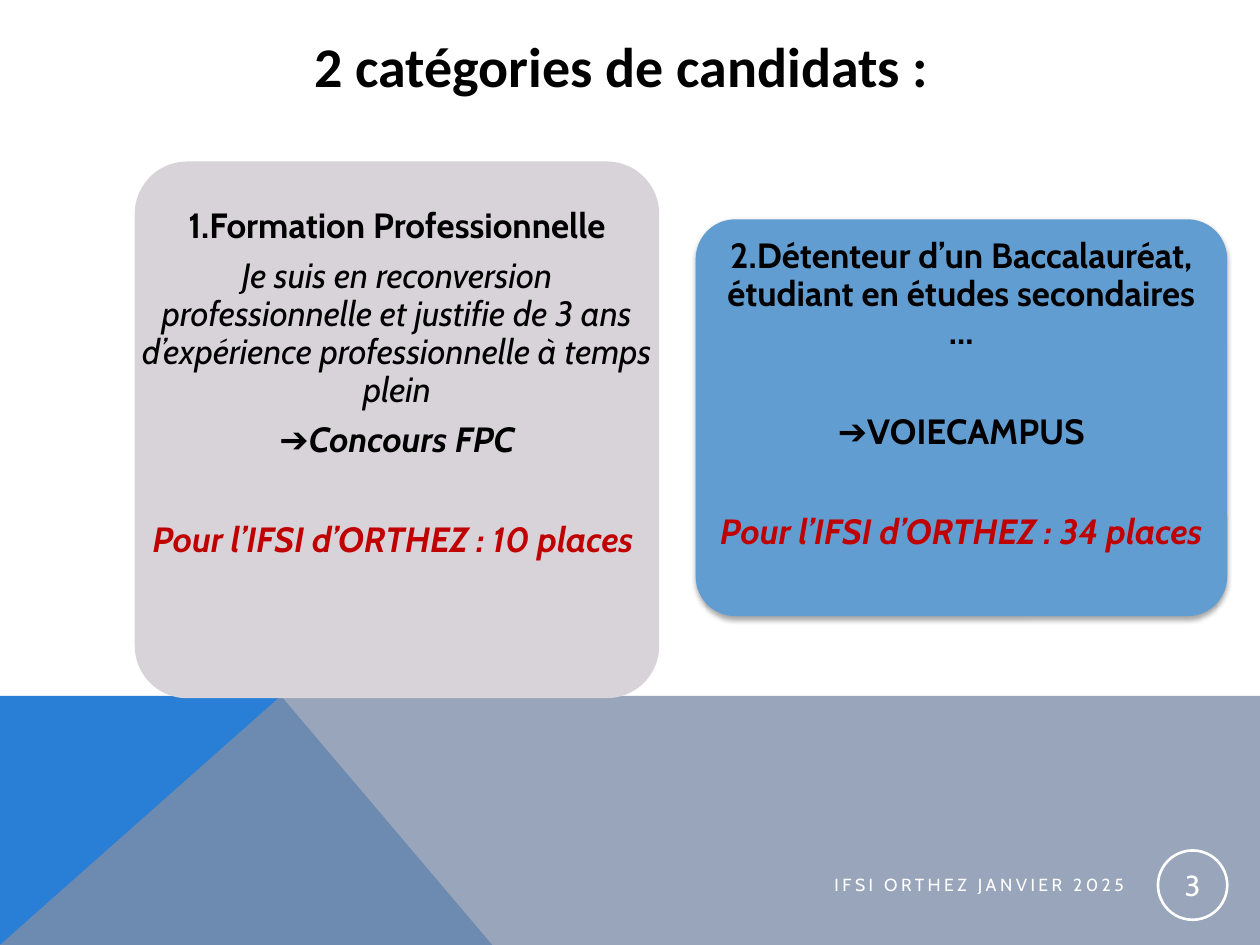
import pptx
import pptx.util
import pptx.dml.color
import pptx.enum.shapes
import pptx.enum.text
import pptx.oxml
import pptx.oxml.ns
from pptx.util import Pt

SHAPE = pptx.enum.shapes.MSO_SHAPE
ALIGN = pptx.enum.text.PP_ALIGN
ANCHOR = pptx.enum.text.MSO_ANCHOR

THEME = {
    "blue": "297FD5", "slate": "7F8FA9", "sky": "629DD1", "mauve": "D8D3D9",
    "black": "000000", "red": "C00000", "white": "FFFFFF",
    "body_font": "Cabin", "title_font": "Calibri",
    "title": 32, "body": 20, "number": 16.5, "footer": 10,
}

# Content: lines are (text, colour, bold, italic, space before)
GAP, WIDE_GAP = 7, 35.5
TITLE = "2 catégories de candidats :"
FOOTER = "IFSI ORTHEZ JANVIER 2025"
NUMBER = "3"
CARDS = [
    {"box": (397.5, 125.3, 303.8, 226.8), "fill": "sky", "shadow": True,
     "text_box": (403.9, 136.3, 290.9, 190), "inset": 4.3,
     "lines": [
         ("2.Détenteur d’un Baccalauréat, étudiant en études secondaires …",
          "black", True, False, 0),
         ("➔VOIECAMPUS", "black", True, False, WIDE_GAP),
         ("Pour l’IFSI d’ORTHEZ : 34 places", "red", True, True, WIDE_GAP)]},
    {"box": (77, 92.3, 299.7, 306.7), "fill": "mauve", "shadow": False,
     "text_box": (77, 119.2, 299.7, 240), "inset": 3.6,
     "lines": [
         ("1.Formation Professionnelle", "black", True, False, 0),
         ("Je suis en reconversion professionnelle et justifie de 3 ans "
          "d’expérience professionnelle à temps plein",
          "black", False, True, GAP),
         ("➔Concours FPC", "black", True, True, GAP),
         ("Pour l’IFSI d’ORTHEZ : 10 places ", "red", True, True, WIDE_GAP)]},
]

# Bottom band: outlines that share its top edge and the peak
WIDTH, HEIGHT, BAND_TOP, PEAK = 720, 540, 397.7, 160.6
BANDS = [
    ("blue", None, [(0, HEIGHT), (0, BAND_TOP), (PEAK, BAND_TOP), (281.3, HEIGHT)]),
    ("slate", 80, [(0, HEIGHT), (PEAK, BAND_TOP), (WIDTH, BAND_TOP), (WIDTH, HEIGHT)]),
]


def color(name):
    return pptx.dml.color.RGBColor.from_string(THEME[name])


def xml(tag, attributes, inner=""):
    namespace = pptx.oxml.ns.nsdecls("a")
    return pptx.oxml.parse_xml(f"<a:{tag} {namespace} {attributes}>{inner}</a:{tag}>")


def paint(shape, fill):
    shape.shadow.inherit = False
    shape.line.fill.background()
    shape.fill.solid()
    shape.fill.fore_color.rgb = color(fill)


def set_frame(shape, insets, anchor):
    frame = shape.text_frame
    frame.word_wrap = True
    frame.vertical_anchor = anchor
    frame.margin_left = frame.margin_right = Pt(insets[0])
    frame.margin_top = frame.margin_bottom = Pt(insets[1])
    return frame


def write(paragraph, text, size, ink, align=ALIGN.CENTER, font="body_font",
          bold=False, italic=False):
    paragraph.text = text
    paragraph.alignment = align
    paragraph.font.name = THEME[font]
    paragraph.font.size = Pt(THEME[size])
    paragraph.font.color.rgb = color(ink)
    paragraph.font.bold = bold
    paragraph.font.italic = italic


def add_text_box(slide, box, insets=(7.2, 3.6), anchor=ANCHOR.TOP):
    return set_frame(slide.shapes.add_textbox(*map(Pt, box)), insets, anchor)


def add_band(slide, fill, opacity, points):
    start, *others = [(Pt(x), Pt(y)) for x, y in points]
    builder = slide.shapes.build_freeform(*start)
    builder.add_line_segments(others, close=True)
    band = builder.convert_to_shape()
    paint(band, fill)
    if opacity:
        shade = band._element.spPr.find(".//" + pptx.oxml.ns.qn("a:srgbClr"))
        shade.append(xml("alpha", f'val="{opacity * 1000}"'))


def add_card(slide, card):
    shape = slide.shapes.add_shape(SHAPE.ROUNDED_RECTANGLE, *map(Pt, card["box"]))
    shape.adjustments[0] = 0.1
    paint(shape, card["fill"])
    if card["shadow"]:
        effects = shape._element.spPr.find(pptx.oxml.ns.qn("a:effectLst"))
        effects.append(xml(
            "outerShdw",
            f'blurRad="{Pt(3.1)}" dist="{Pt(1.8)}" dir="5400000" rotWithShape="0"',
            f'<a:srgbClr val="{THEME["black"]}"><a:alpha val="35000"/></a:srgbClr>'))
    frame = add_text_box(slide, card["text_box"], (card["inset"], 0))
    for index, (text, ink, bold, italic, before) in enumerate(card["lines"]):
        paragraph = frame.add_paragraph() if index else frame.paragraphs[0]
        write(paragraph, text, "body", ink, bold=bold, italic=italic)
        paragraph.line_spacing = 0.9
        paragraph.space_before = Pt(before)


def main():
    presentation = pptx.Presentation()
    presentation.slide_width, presentation.slide_height = Pt(WIDTH), Pt(HEIGHT)
    slide = presentation.slides.add_slide(presentation.slide_layouts[6])

    for band in BANDS:
        add_band(slide, *band)
    for card in CARDS:
        add_card(slide, card)

    # Footer with letter spacing
    footer = add_text_box(slide, (277.2, 494.6, 372.2, 21.6), anchor=ANCHOR.MIDDLE)
    write(footer.paragraphs[0], FOOTER, "footer", "white", ALIGN.RIGHT)
    footer.paragraphs[0].runs[0].font._element.set("spc", "200")

    # Slide number in a ring
    ring = slide.shapes.add_shape(SHAPE.OVAL, Pt(661.7), Pt(486), Pt(39.6), Pt(39.6))
    ring.shadow.inherit = False
    ring.fill.background()
    ring.line.color.rgb = color("white")
    ring.line.width = Pt(1.5)
    number = set_frame(ring, (0.7, 0.7), ANCHOR.MIDDLE)
    write(number.paragraphs[0], NUMBER, "number", "white")

    # Title
    title = add_text_box(slide, (77, 14.4, 556.6, 46))
    write(title.paragraphs[0], TITLE, "title", "black", font="title_font", bold=True)

    presentation.save("out.pptx")


if __name__ == "__main__":
    main()
